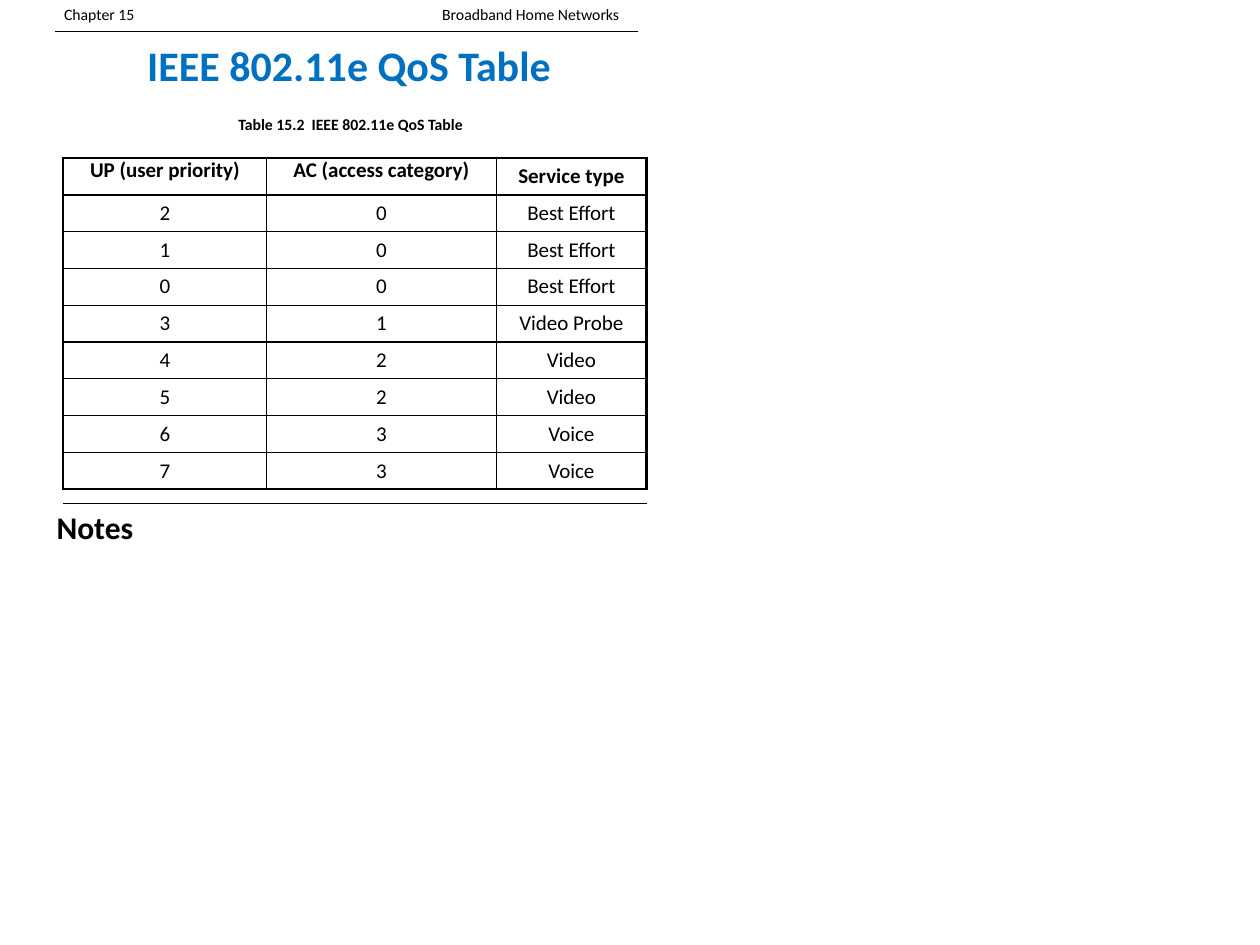
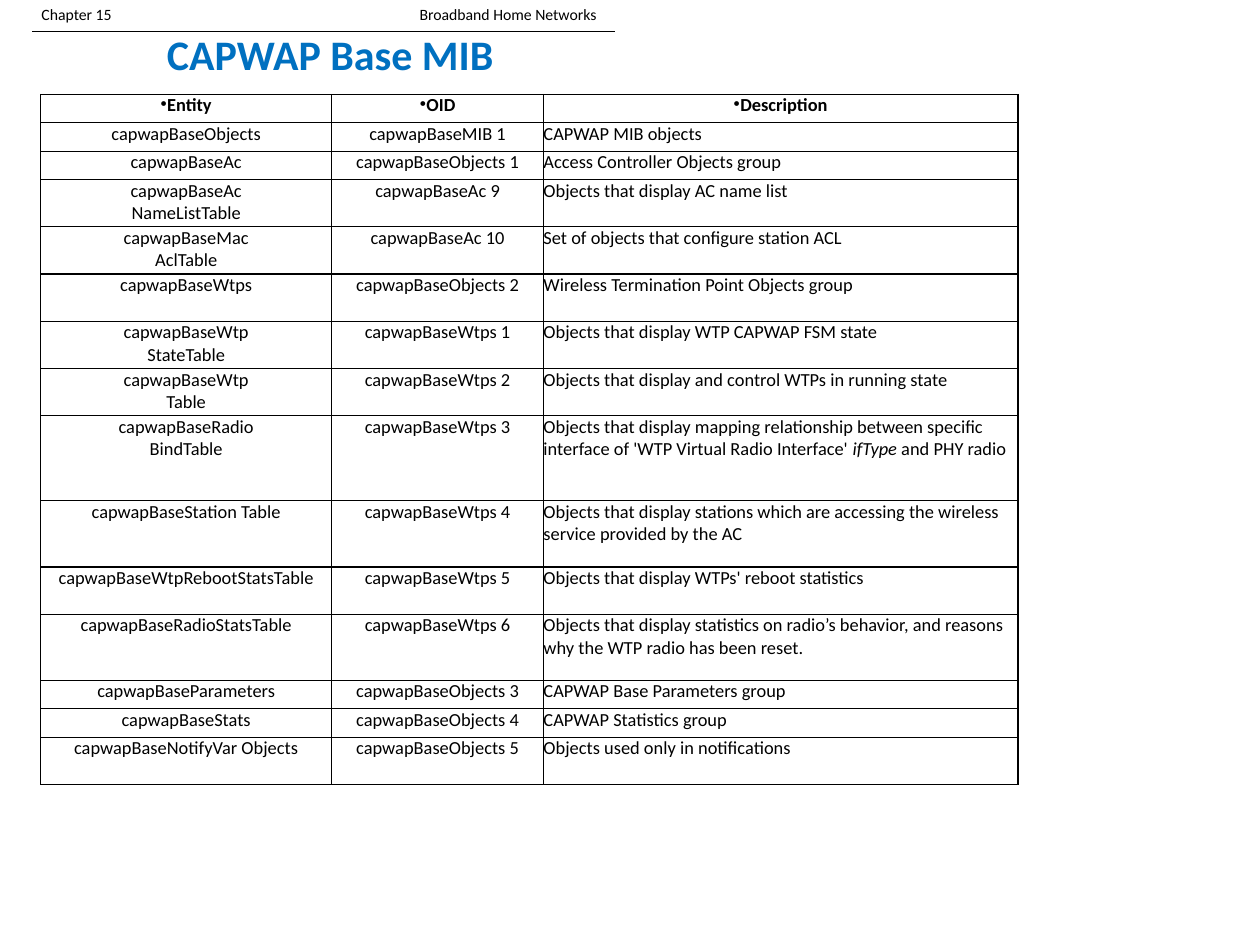
from dataclasses import dataclass

from lxml.etree import SubElement
from pptx import Presentation
from pptx.dml.color import RGBColor
from pptx.enum.shapes import MSO_CONNECTOR
from pptx.enum.text import MSO_ANCHOR, MSO_AUTO_SIZE, PP_ALIGN
from pptx.oxml.ns import qn
from pptx.util import Inches, Pt

BLACK = "000000"
BLUE = "0070C0"
FONT = "Calibri"
TITLE_ONLY = 5
CENTER, LEFT = PP_ALIGN.CENTER, PP_ALIGN.LEFT
TOP, MIDDLE = MSO_ANCHOR.TOP, MSO_ANCHOR.MIDDLE


@dataclass
class Style:
    size: int
    bold: bool = False
    color: str = BLACK
    align: PP_ALIGN = LEFT
    bullet: str = ""
    indent: float = 0
    tab: float = 0


@dataclass
class Label:
    text: str
    left: float
    top: float
    width: float
    height: float
    style: Style


@dataclass
class Rule:
    left: float
    top: float
    width: float = 6.17


@dataclass
class Grid:
    left: float
    top: float
    columns: list[float]
    heights: list[float]
    rows: list[tuple[str, ...]]
    header: Style
    body: list[Style]
    header_anchors: list[MSO_ANCHOR]
    body_anchor: MSO_ANCHOR
    frame_width: int


TITLE = Style(32, True, BLUE, CENTER)
RUNNING_HEAD = Style(12, tab=4)
CAPTION = Style(12, True, align=CENTER)
NOTES = Style(24, True, indent=0.5)

QOS = Grid(
    left=0.67, top=1.67, columns=[2.15, 2.43, 1.59], heights=[0.39] * 9,
    rows=[
        ("UP (user priority)", "AC (access category)", "Service type"),
        ("2", "0", "Best Effort"),
        ("1", "0", "Best Effort"),
        ("0", "0", "Best Effort"),
        ("3", "1", "Video Probe"),
        ("4", "2", "Video"),
        ("5", "2", "Video"),
        ("6", "3", "Voice"),
        ("7", "3", "Voice"),
    ],
    header=Style(16, True, align=CENTER), body=[Style(16, align=CENTER)] * 3,
    header_anchors=[TOP, TOP, MIDDLE], body_anchor=MIDDLE, frame_width=2,
)

MIB = Grid(
    left=0.43, top=1, columns=[3.08, 2.24, 5.02],
    heights=[0.3] * 3 + [0.5] * 5 + [0.9, 0.7, 0.5, 0.7, 0.3, 0.3, 0.5],
    rows=[
        ("Entity", "OID", "Description"),
        ("capwapBaseObjects", "capwapBaseMIB 1", "CAPWAP MIB objects"),
        ("capwapBaseAc", "capwapBaseObjects 1", "Access Controller Objects group"),
        ("capwapBaseAc\nNameListTable", "capwapBaseAc 9", "Objects that display AC name list"),
        ("capwapBaseMac\nAclTable", "capwapBaseAc 10", "Set of objects that configure station ACL"),
        ("capwapBaseWtps", "capwapBaseObjects 2", "Wireless Termination Point Objects group"),
        ("capwapBaseWtp\nStateTable", "capwapBaseWtps 1", "Objects that display WTP CAPWAP FSM state"),
        ("capwapBaseWtp\nTable", "capwapBaseWtps 2", "Objects that display and control WTPs in running state"),
        ("capwapBaseRadio\nBindTable", "capwapBaseWtps 3",
         "Objects that display mapping relationship between specific interface of "
         "'WTP Virtual Radio Interface' *ifType* and PHY radio"),
        ("capwapBaseStation Table", "capwapBaseWtps 4",
         "Objects that display stations which are accessing the wireless service provided by the AC"),
        ("capwapBaseWtpRebootStatsTable", "capwapBaseWtps 5", "Objects that display WTPs' reboot statistics"),
        ("capwapBaseRadioStatsTable", "capwapBaseWtps 6",
         "Objects that display statistics on radio’s behavior, and reasons why the WTP radio has been reset."),
        ("capwapBaseParameters", "capwapBaseObjects 3", "CAPWAP Base Parameters group"),
        ("capwapBaseStats", "capwapBaseObjects 4", "CAPWAP Statistics group"),
        ("capwapBaseNotifyVar Objects", "capwapBaseObjects 5", "Objects used only in notifications"),
    ],
    header=Style(14, True, align=CENTER, bullet="•"),
    body=[Style(14, align=CENTER), Style(14, align=CENTER), Style(14)],
    header_anchors=[TOP] * 3, body_anchor=TOP, frame_width=1,
)


def paint(target, color: str) -> None:
    target.rgb = RGBColor.from_string(color)


def apply(target, values: dict) -> None:
    for name, value in values.items():
        setattr(target, name, value)


def format_paragraph(para, style: Style) -> None:
    para.alignment = style.align
    properties = para._p.get_or_add_pPr()
    if style.indent or style.bullet:
        properties.set("marL", str(Inches(style.indent)))
        properties.set("indent", "0")
    if style.bullet:
        bullet_color = SubElement(properties, qn("a:buClr"))
        SubElement(bullet_color, qn("a:srgbClr"), val=style.color)
        SubElement(properties, qn("a:buChar"), char=style.bullet)
    if style.tab:
        tabs = SubElement(properties, qn("a:tabLst"))
        SubElement(tabs, qn("a:tab"), pos=str(Inches(style.tab)), algn="l")


def write(frame, text: str, style: Style) -> None:
    for index, line in enumerate(text.split("\n")):
        para = frame.add_paragraph() if index else frame.paragraphs[0]
        format_paragraph(para, style)
        for position, piece in enumerate(line.split("*")):
            span = para.add_run()
            span.text = piece
            apply(span.font, {"name": FONT, "size": Pt(style.size),
                              "bold": style.bold, "italic": position % 2 == 1})
            paint(span.font.color, style.color)


def add_label(page, label: Label) -> None:
    box = page.shapes.add_textbox(
        *map(Inches, (label.left, label.top, label.width, label.height)))
    box.text_frame.word_wrap = True
    write(box.text_frame, label.text, label.style)


def add_rule(page, rule: Rule) -> None:
    line = page.shapes.add_connector(
        MSO_CONNECTOR.STRAIGHT,
        *map(Inches, (rule.left, rule.top, rule.left + rule.width, rule.top)))
    line.line.width = Pt(1)
    paint(line.line.color, BLACK)
    SubElement(line._element.spPr, qn("a:effectLst"))


def add_borders(cell, widths: dict[str, int]) -> None:
    properties = cell._tc.get_or_add_tcPr()
    for side, width in widths.items():
        border = SubElement(properties, qn(f"a:ln{side}"), w=str(Pt(width)))
        fill = SubElement(border, qn("a:solidFill"))
        SubElement(fill, qn("a:srgbClr"), val=BLACK)


def add_grid(page, grid: Grid) -> None:
    last_row, last_column = len(grid.rows) - 1, len(grid.columns) - 1
    table = page.shapes.add_table(
        last_row + 1, last_column + 1,
        *map(Inches, (grid.left, grid.top, sum(grid.columns), sum(grid.heights)))).table
    apply(table, {"first_row": False, "horz_banding": False})
    for column, width in zip(table.columns, grid.columns):
        column.width = Inches(width)
    for row, height in zip(table.rows, grid.heights):
        row.height = Inches(height)
    for r, texts in enumerate(grid.rows):
        for c, text in enumerate(texts):
            cell = table.cell(r, c)
            apply(cell, {"margin_left": 0, "margin_right": 0, "margin_top": 0, "margin_bottom": 0,
                         "vertical_anchor": grid.body_anchor if r else grid.header_anchors[c]})
            write(cell.text_frame, text, grid.body[c] if r else grid.header)
            framed = {"L": c == 0, "R": c == last_column, "T": r <= 1, "B": r in (0, last_row)}
            add_borders(cell, {side: grid.frame_width if outer else 1
                               for side, outer in framed.items()})
            cell.fill.background()


def add_page(deck, title: Label, head_left: float):
    page = deck.slides.add_slide(deck.slide_layouts[TITLE_ONLY])
    box = page.shapes.title
    apply(box, {"left": Inches(title.left), "top": Inches(title.top),
                "width": Inches(title.width), "height": Inches(title.height)})
    apply(box.text_frame, {"word_wrap": True, "auto_size": MSO_AUTO_SIZE.NONE,
                           "vertical_anchor": MIDDLE})
    write(box.text_frame, title.text, title.style)
    add_rule(page, Rule(head_left, 0.33))
    add_label(page, Label("Chapter 15\tBroadband Home Networks", head_left, 0, 6.3, 0.3, RUNNING_HEAD))
    return page


def main() -> None:
    deck = Presentation()
    apply(deck, {"slide_width": Inches(13.33), "slide_height": Inches(10)})

    qos_page = add_page(deck, Label("IEEE 802.11e QoS Table", 0.57, 0.47, 6.25, 0.42, TITLE), 0.58)
    add_label(qos_page, Label("Table 15.2  IEEE 802.11e QoS Table", 0.67, 1.17, 6.08, 0.3, CAPTION))
    add_grid(qos_page, QOS)
    add_rule(qos_page, Rule(0.67, 5.33))
    add_label(qos_page, Label("Notes", 0, 5.33, 1.67, 0.5, NOTES))

    mib_page = add_page(deck, Label("CAPWAP Base MIB", 0.41, 0.36, 6.17, 0.42, TITLE), 0.34)
    add_grid(mib_page, MIB)

    deck.save("out.pptx")


if __name__ == "__main__":
    main()
